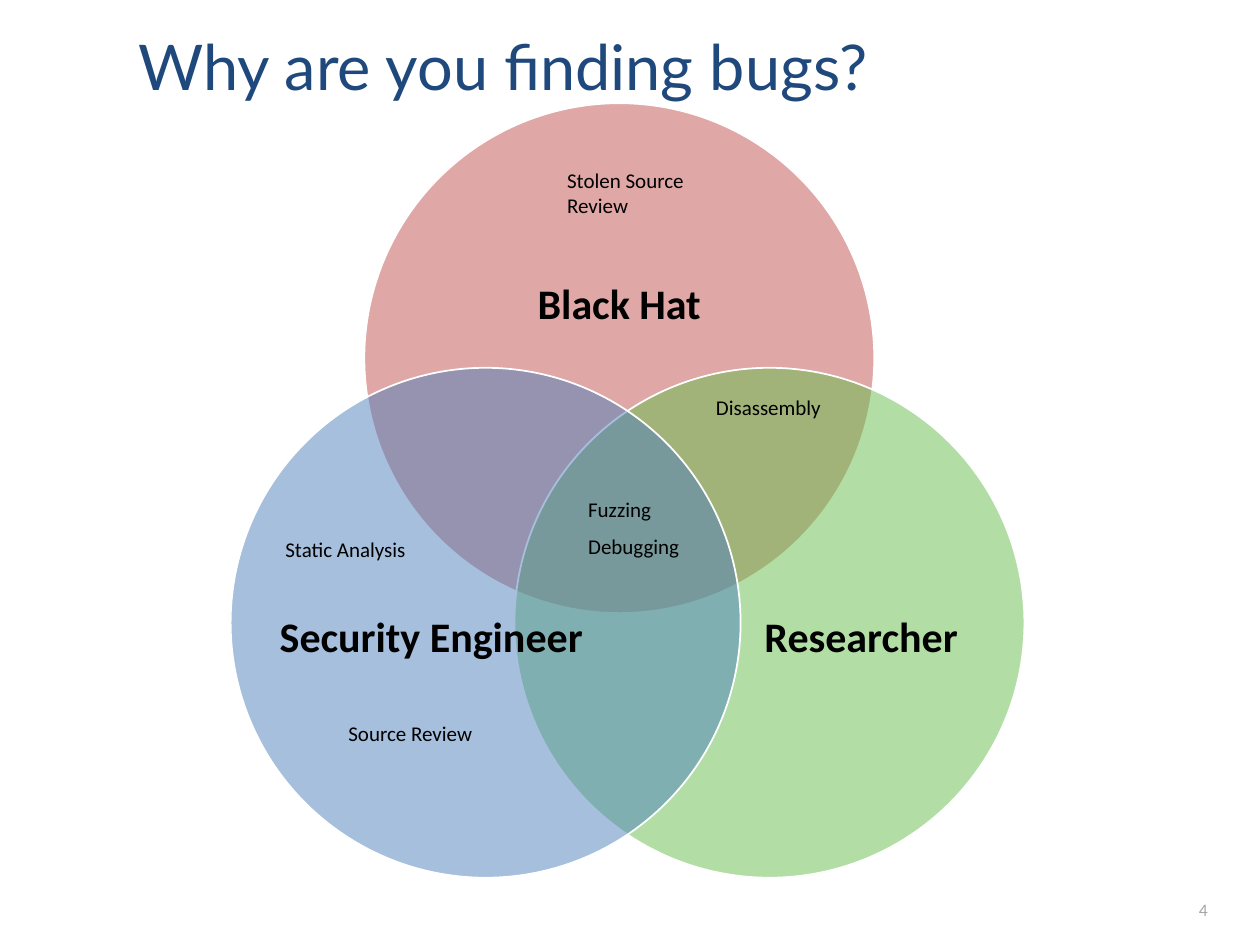
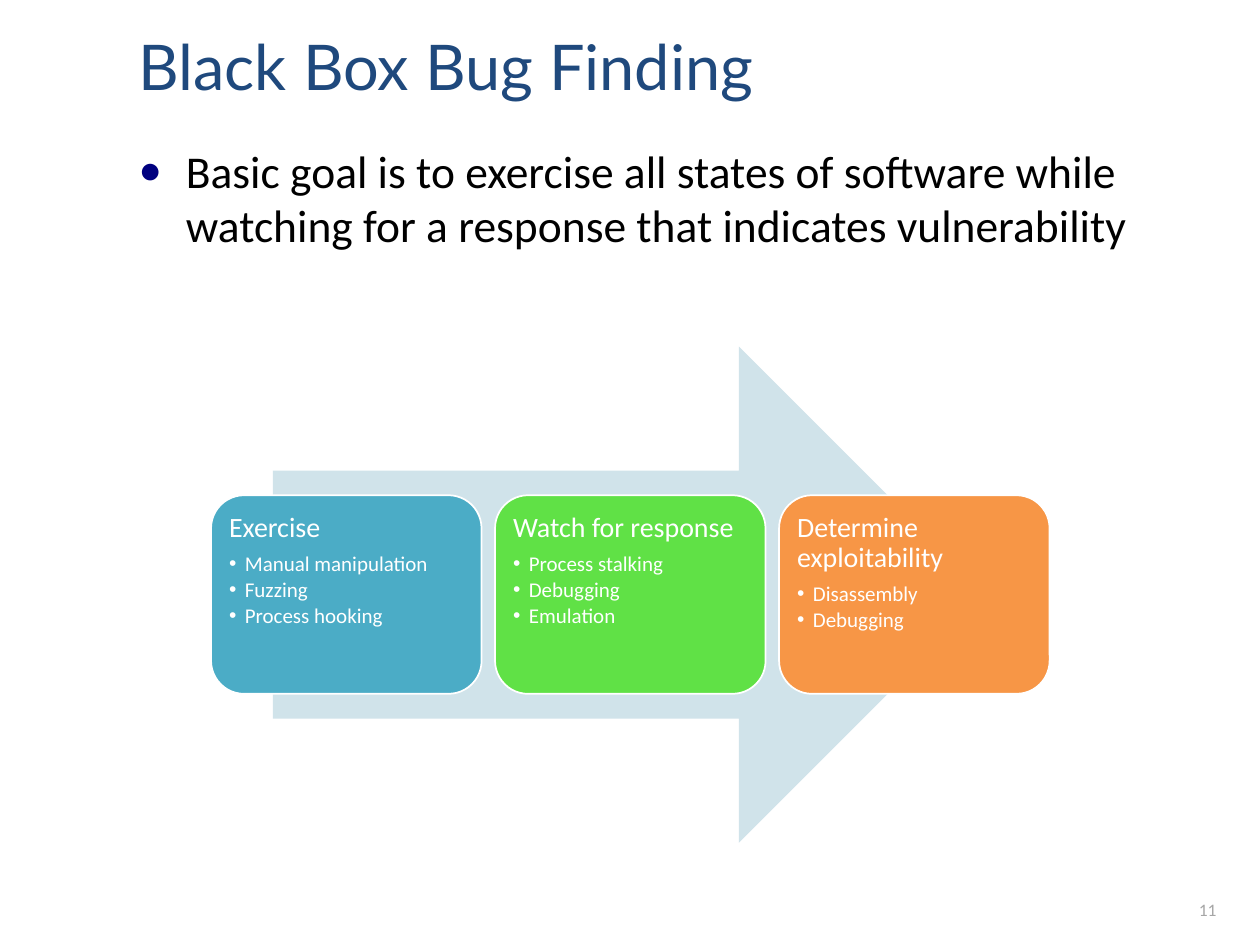
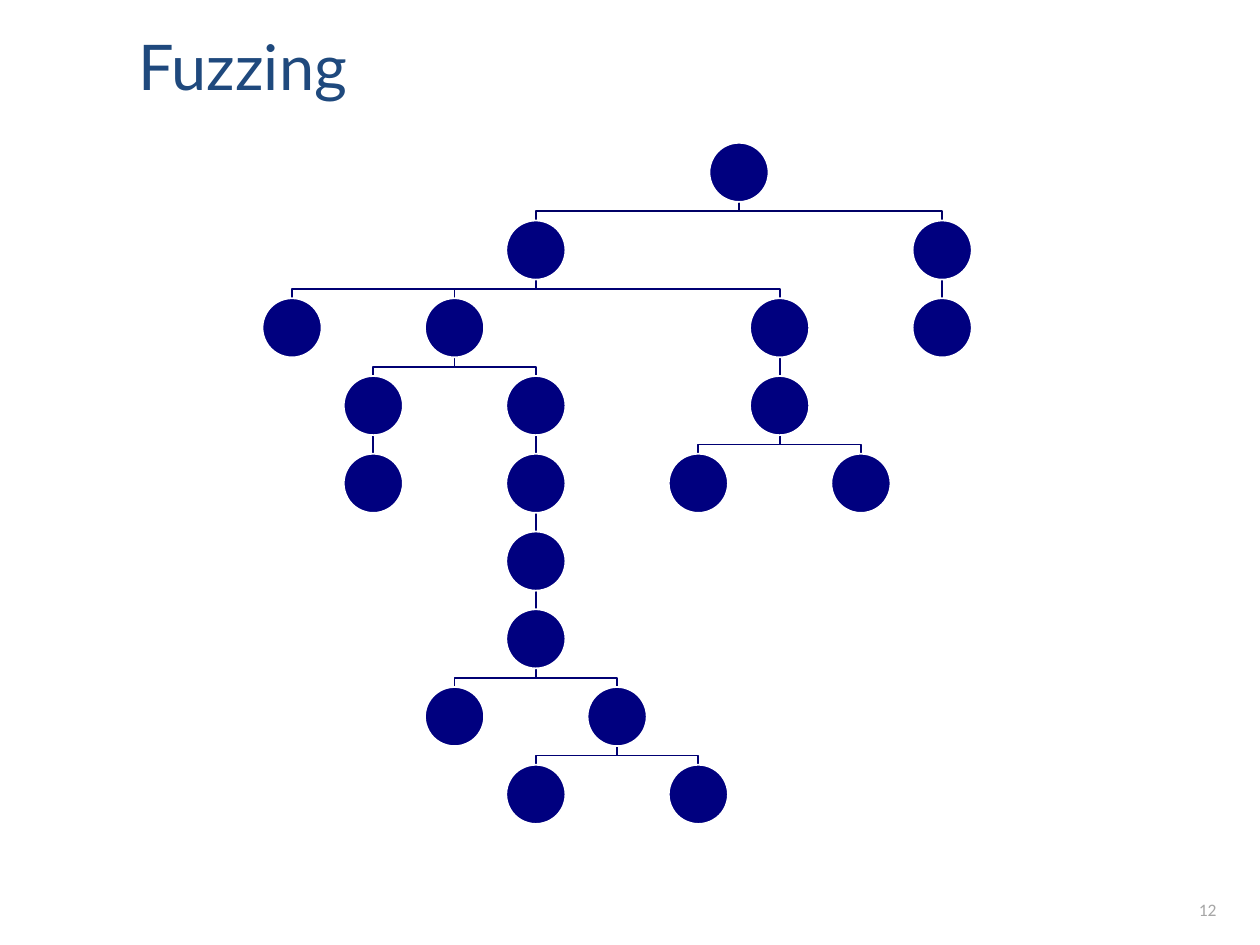
from dataclasses import dataclass

from lxml import etree
from pptx import Presentation
from pptx.dml.color import RGBColor
from pptx.enum.shapes import MSO_CONNECTOR, MSO_SHAPE
from pptx.enum.text import MSO_ANCHOR, MSO_AUTO_SIZE, PP_ALIGN
from pptx.oxml.ns import qn
from pptx.util import Pt

OVAL = MSO_SHAPE.OVAL
ARROW = MSO_SHAPE.RIGHT_ARROW
CARD = MSO_SHAPE.ROUNDED_RECTANGLE
STRAIGHT = MSO_CONNECTOR.STRAIGHT
TOP, MIDDLE, BOTTOM = MSO_ANCHOR.TOP, MSO_ANCHOR.MIDDLE, MSO_ANCHOR.BOTTOM
LEFT, CENTER = PP_ALIGN.LEFT, PP_ALIGN.CENTER
NO_FIT = MSO_AUTO_SIZE.NONE


@dataclass(frozen=True)
class Theme:
    title_font: str = "Lato"
    text_font: str = "Calibri"
    title_color: str = "1F497D"
    text_color: str = "000000"
    number_color: str = "A6A6A6"
    white: str = "FFFFFF"
    navy: str = "00007F"
    root_branch: str = "000066"
    branch: str = "000073"
    red: str = "C0504D"
    green: str = "66BF4E"
    blue: str = "4F81BD"
    pale_blue: str = "D0E3EA"
    teal: str = "4BACC6"
    lime: str = "60E146"
    orange: str = "F79646"
    title_size: int = 36
    body_size: int = 26
    role_size: int = 24
    step_size: int = 16
    detail_size: int = 12
    number_size: int = 10


theme = Theme()


def write(paragraph, text, size, color=theme.text_color, font=theme.text_font,
          bold=False, bullet=None):
    if bullet:
        char, indent, bullet_color, percent = bullet
        props = paragraph._p.get_or_add_pPr()
        props.set("marL", str(Pt(indent)))
        props.set("indent", str(-Pt(indent)))
        tint = etree.SubElement(props, qn("a:buClr"))
        etree.SubElement(tint, qn("a:srgbClr"), val=bullet_color)
        etree.SubElement(props, qn("a:buSzPct"), val=str(percent * 1000))
        etree.SubElement(props, qn("a:buFont"), typeface="Arial")
        etree.SubElement(props, qn("a:buChar"), char=char)
    run = paragraph.add_run()
    run.text = text
    run.font.name = font
    run.font.size = Pt(size)
    run.font.bold = bold
    run.font.color.rgb = RGBColor.from_string(color)


def add_solid(slide, preset, left, top, width, height, fill, outlined=True):
    solid = slide.shapes.add_shape(preset, Pt(left), Pt(top), Pt(width), Pt(height))
    solid.shadow.inherit = False
    solid.fill.solid()
    solid.fill.fore_color.rgb = RGBColor.from_string(fill)
    if outlined:
        solid.line.color.rgb = RGBColor.from_string(theme.white)
        solid.line.width = Pt(1)
    else:
        solid.line.fill.background()
    return solid


deck = Presentation()
deck.slide_width, deck.slide_height = Pt(720), Pt(540)
title_only, title_and_body = deck.slide_layouts[5], deck.slide_layouts[1]

slides = []
for heading, number, layout in [
    ("Why are you finding bugs?", "4", title_only),
    ("Black Box Bug Finding", "11", title_and_body),
    ("Fuzzing", "12", title_only),
]:
    slide = deck.slides.add_slide(layout)
    slides.append(slide)
    title = slide.shapes.title
    title.left, title.top, title.width, title.height = Pt(72), Pt(21.6), Pt(600), Pt(44.6)
    title_frame = title.text_frame
    title_frame.auto_size = NO_FIT
    title_frame.vertical_anchor = BOTTOM
    title_frame.margin_bottom = Pt(7.2)
    title_frame.paragraphs[0].alignment = LEFT
    write(title_frame.paragraphs[0], heading, theme.title_size, theme.title_color, theme.title_font)
    page = slide.shapes.add_textbox(Pt(678), Pt(510), Pt(42), Pt(19.4))
    page.text_frame.word_wrap = True
    write(page.text_frame.paragraphs[0], number, theme.number_size, theme.number_color)

venn_slide, process_slide, tree_slide = slides

diameter = 291.4
for role, color, left, top, label_left, label_top, label_width, label_height in [
    ("Black Hat", theme.red, 208.2, 59, 247, 109.4, 213.8, 131),
    ("Researcher", theme.green, 294, 210.2, 404.6, 285, 175, 160.6),
    ("Security Engineer", theme.blue, 131.8, 210.2, 159, 285, 175, 160.6),
]:
    circle = add_solid(venn_slide, OVAL, left, top, diameter, diameter, color)
    tone = circle._element.spPr.find(qn("a:solidFill")).find(qn("a:srgbClr"))
    etree.SubElement(tone, qn("a:alpha"), val="50000")
    label = venn_slide.shapes.add_textbox(
        Pt(label_left), Pt(label_top), Pt(label_width), Pt(label_height))
    label_frame = label.text_frame
    label_frame.word_wrap = True
    label_frame.vertical_anchor = MIDDLE
    label_frame.margin_left = label_frame.margin_right = 0
    label_frame.margin_top = label_frame.margin_bottom = 0
    label_frame.paragraphs[0].alignment = CENTER
    label_frame.paragraphs[0].line_spacing = 0.9
    write(label_frame.paragraphs[0], role, theme.role_size, bold=True)

for technique, left, top, width, height in [
    ("Disassembly", 402, 222, 90, 21.8),
    ("Fuzzing", 329, 280, 90, 21.8),
    ("Source Review", 192, 408, 90, 21.8),
    ("Stolen Source Review", 317, 92, 102, 36.4),
    ("Static Analysis", 156, 303, 90, 21.8),
    ("Debugging", 329, 301.6, 90, 21.8),
]:
    caption = venn_slide.shapes.add_textbox(Pt(left), Pt(top), Pt(width), Pt(height))
    caption.text_frame.word_wrap = True
    write(caption.text_frame.paragraphs[0], technique, theme.detail_size)

goal = process_slide.placeholders[1]
goal.left, goal.top, goal.width, goal.height = Pt(72), Pt(78), Pt(612), Pt(396)
goal.text_frame.auto_size = NO_FIT
goal_line = goal.text_frame.paragraphs[0]
write(goal_line,
      "Basic goal is to exercise all states of software while watching for a response "
      "that indicates vulnerability",
      theme.body_size, bullet=("●", 27, theme.navy, 85))
goal_line.space_before = Pt(0)
goal_line.space_after = Pt(1)

add_solid(process_slide, ARROW, 156, 198, 408, 283.6, theme.pale_blue, outlined=False)

card_pitch = 162.3
for index, (step, color, details) in enumerate([
    ("Exercise", theme.teal, ["Manual manipulation", "Fuzzing", "Process hooking"]),
    ("Watch for response", theme.lime, ["Process stalking", "Debugging", "Emulation"]),
    ("Determine exploitability", theme.orange, ["Disassembly", "Debugging"]),
]):
    card = add_solid(process_slide, CARD, 120.6 + index * card_pitch, 283, 154.6, 113.5, color)
    card_frame = card.text_frame
    card_frame.word_wrap = True
    card_frame.vertical_anchor = TOP
    card_frame.margin_left = card_frame.margin_right = Pt(4.8)
    card_frame.margin_top = card_frame.margin_bottom = Pt(4.8)
    step_line = card_frame.paragraphs[0]
    write(step_line, step, theme.step_size, theme.white)
    step_line.space_after = Pt(5.6)
    for detail in details:
        detail_line = card_frame.add_paragraph()
        write(detail_line, detail, theme.detail_size, theme.white,
              bullet=("•", 9, theme.white, 100))
        detail_line.space_after = Pt(1.8)
    for line in card_frame.paragraphs:
        line.alignment = LEFT
        line.line_spacing = 0.9

first_column, column_pitch = 166.9, 46.44
first_row, row_pitch = 81.6, 44.43
node_size = 33.8
root = (5.5, 0)
branches = [
    (root, [3, 8]),
    ((3, 1), [0, 2, 6]),
    ((8, 1), [8]),
    ((2, 2), [1, 3]),
    ((6, 2), [6]),
    ((1, 3), [1]),
    ((3, 3), [3]),
    ((6, 3), [5, 7]),
    ((3, 4), [3]),
    ((3, 5), [3]),
    ((3, 6), [2, 4]),
    ((4, 7), [3, 5]),
]

nodes = [root]
for (column, row), children in branches:
    parent_x = Pt(first_column + column * column_pitch)
    parent_y = Pt(first_row + row * row_pitch + node_size)
    child_y = Pt(first_row + (row + 1) * row_pitch)
    bend_y = (parent_y + child_y) // 2
    for child in children:
        nodes.append((child, row + 1))
        child_x = Pt(first_column + child * column_pitch)
        if child == column:
            branch = tree_slide.shapes.add_connector(STRAIGHT, parent_x, parent_y, child_x, child_y)
            etree.SubElement(branch._element.spPr, qn("a:effectLst"))
        else:
            outline = tree_slide.shapes.build_freeform(parent_x, parent_y)
            outline.add_line_segments(
                [(parent_x, bend_y), (child_x, bend_y), (child_x, child_y)], close=False)
            branch = outline.convert_to_shape()
            branch.fill.background()
            branch.shadow.inherit = False
        branch.line.color.rgb = RGBColor.from_string(
            theme.root_branch if row == 0 else theme.branch)
        branch.line.width = Pt(1)

for column, row in nodes:
    add_solid(tree_slide, OVAL, first_column + column * column_pitch - node_size / 2,
              first_row + row * row_pitch, node_size, node_size, theme.navy)

deck.save("out.pptx")
